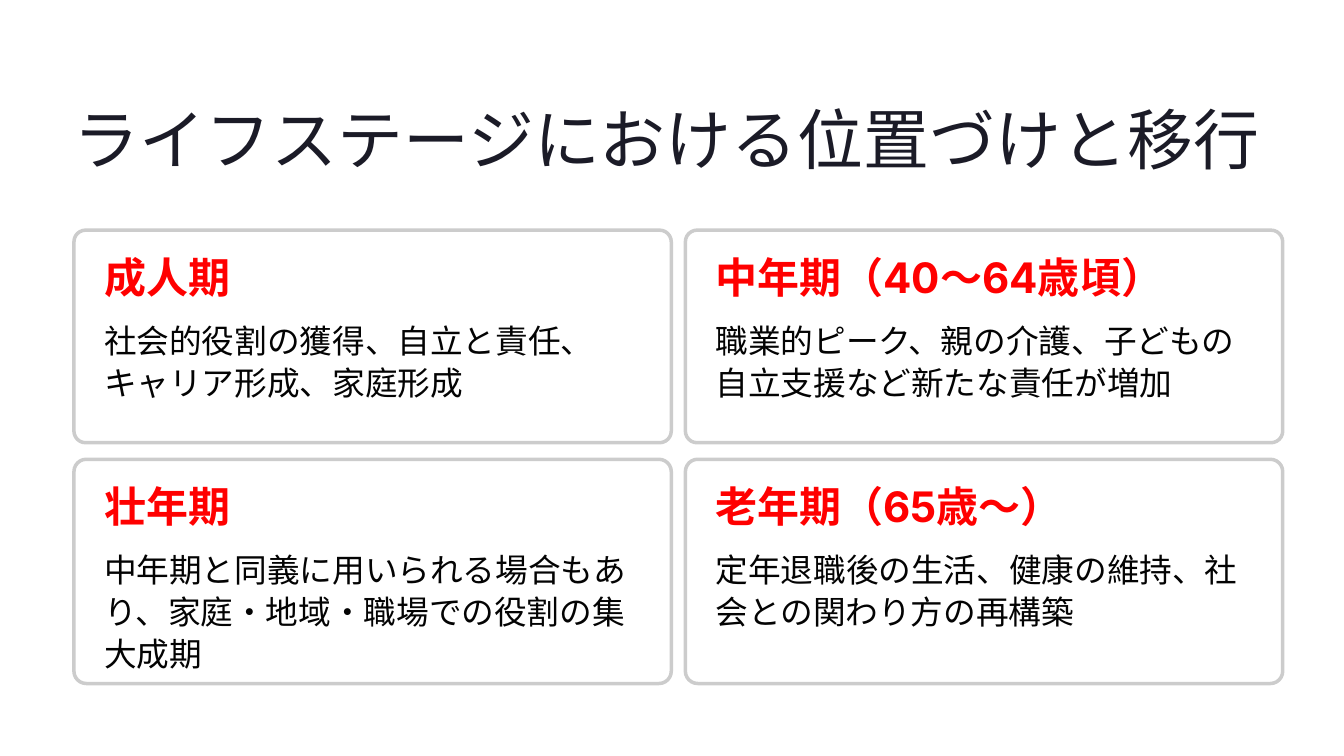
from dataclasses import dataclass

from lxml.etree import SubElement
from pptx import Presentation
from pptx.dml.color import RGBColor
from pptx.enum.shapes import MSO_SHAPE as Preset
from pptx.enum.text import MSO_ANCHOR as Anchor, MSO_AUTO_SIZE as AutoSize, PP_ALIGN as Align
from pptx.oxml.ns import qn
from pptx.shapes.autoshape import Shape
from pptx.slide import Slide
from pptx.util import Pt

LEFT, TOP = 63.4, 197.3
CARD_WIDTH = 512
COLUMN_STEP = 524.1
ROW_STEP = 196.4
ROW_HEIGHTS = (182.2, 192.2)
PADDING = 25.9
TEXT_WIDTH = 449.3


@dataclass(frozen=True)
class TextStyle:
    font: str
    size: float
    line_spacing: float
    color: str
    bold: bool = False


@dataclass(frozen=True)
class Stage:
    name: str
    description: str


TITLE = TextStyle("Inter", 56.5, 71, "1B1B27")
HEADING = TextStyle("Inter", 36, 35.5, "FF0000", bold=True)
BODY = TextStyle("Roboto", 28, 36, "030303")

# Two cards in each row
STAGES = (
    Stage("成人期", "社会的役割の獲得、自立と責任、キャリア形成、家庭形成"),
    Stage("中年期（40〜64歳頃）", "職業的ピーク、親の介護、子どもの自立支援など新たな責任が増加"),
    Stage("壮年期", "中年期と同義に用いられる場合もあり、家庭・地域・職場での役割の集大成期"),
    Stage("老年期（65歳〜）", "定年退職後の生活、健康の維持、社会との関わり方の再構築"),
)


def rgb(color: str) -> RGBColor:
    return RGBColor.from_string(color)


def write_text(shape: Shape, text: str, style: TextStyle) -> None:
    frame = shape.text_frame
    frame.margin_left = frame.margin_top = frame.margin_right = frame.margin_bottom = 0
    frame.word_wrap = True
    frame.auto_size = AutoSize.NONE
    frame.vertical_anchor = Anchor.TOP
    paragraph = frame.paragraphs[0]
    paragraph.alignment = Align.LEFT
    paragraph.line_spacing = Pt(style.line_spacing)
    run = paragraph.add_run()
    run.text = text
    run.font.name = style.font
    run.font.size = Pt(style.size)
    run.font.bold = style.bold
    run.font.color.rgb = rgb(style.color)


def add_text(slide: Slide, left: float, top: float, height: float,
             text: str, style: TextStyle) -> None:
    box = slide.shapes.add_textbox(Pt(left), Pt(top), Pt(TEXT_WIDTH), Pt(height))
    write_text(box, text, style)


def add_card(slide: Slide, left: float, top: float, height: float, stage: Stage) -> None:
    card = slide.shapes.add_shape(
        Preset.ROUNDED_RECTANGLE, Pt(left), Pt(top), Pt(CARD_WIDTH), Pt(height))
    card.adjustments[0] = 0.055
    card.shadow.inherit = False
    card.fill.solid()
    card.fill.fore_color.rgb = rgb("FFFFFF")
    # Fill opacity of 95 percent
    fill_color = card.fill._xPr.find(qn("a:solidFill")).find(qn("a:srgbClr"))
    SubElement(fill_color, qn("a:alpha")).set("val", "95000")
    card.line.color.rgb = rgb("CCCCCC")
    card.line.width = Pt(3)
    add_text(slide, left + PADDING, top + 25.6, 35.5, stage.name, HEADING)
    add_text(slide, left + PADDING, top + 75, 72.7, stage.description, BODY)


def main() -> None:
    presentation = Presentation()
    presentation.slide_width, presentation.slide_height = Pt(1152), Pt(648)
    slide = presentation.slides.add_slide(presentation.slide_layouts[5])
    slide.background.fill.solid()
    slide.background.fill.fore_color.rgb = rgb("FFFFFF")

    # Title
    title = slide.shapes.title
    title.left, title.top, title.width, title.height = Pt(LEFT), Pt(81.4), Pt(1021.7), Pt(71.3)
    write_text(title, "ライフステージにおける位置づけと移行", TITLE)

    # Life stage cards
    for index, stage in enumerate(STAGES):
        row, column = divmod(index, 2)
        add_card(slide, LEFT + column * COLUMN_STEP, TOP + row * ROW_STEP,
                 ROW_HEIGHTS[row], stage)

    presentation.save("out.pptx")


if __name__ == "__main__":
    main()
